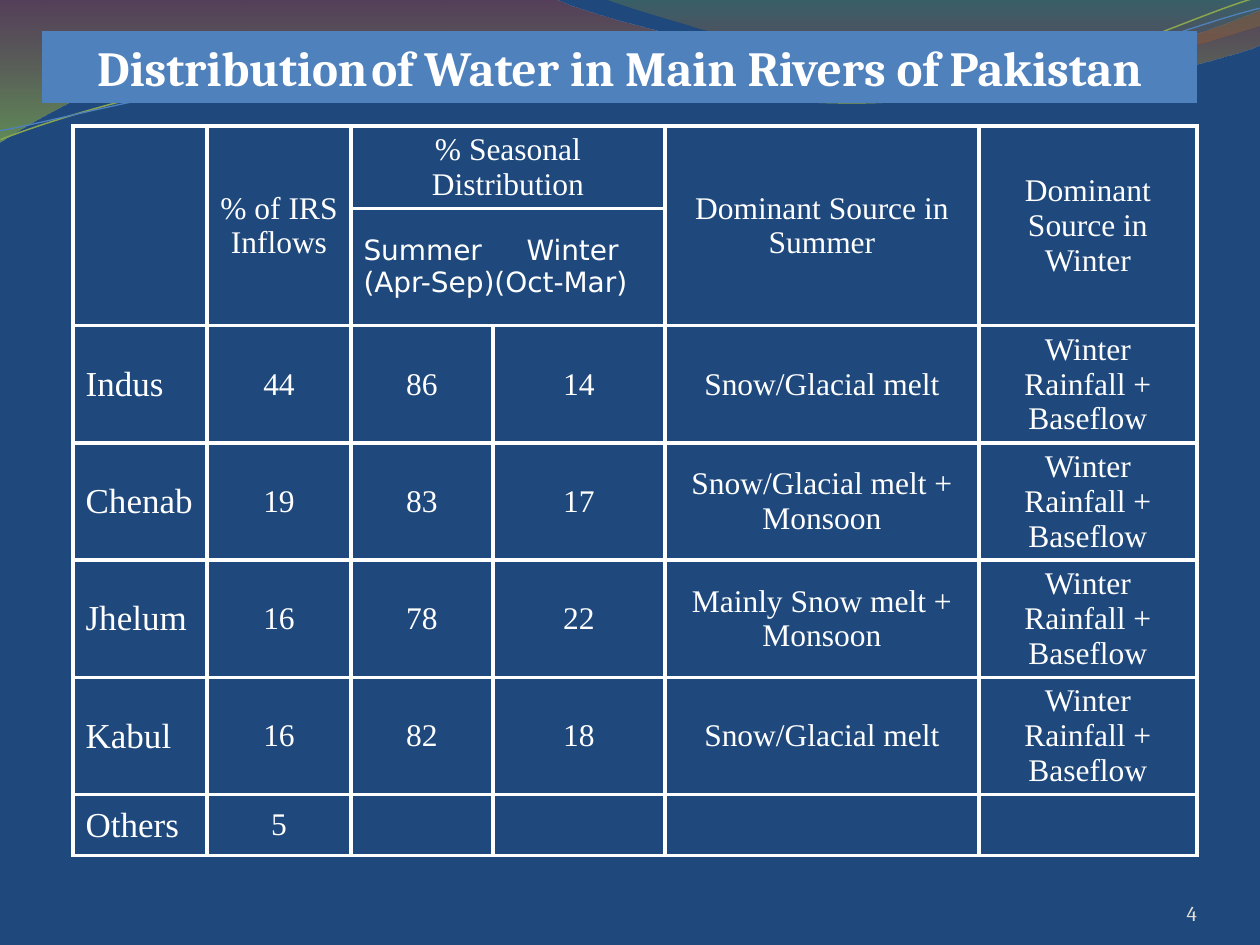
from dataclasses import dataclass

from lxml.etree import SubElement as Sub
from pptx import Presentation
from pptx.dml.color import RGBColor as RGB
from pptx.enum.text import MSO_ANCHOR as Anchor, MSO_AUTO_SIZE as Auto, PP_ALIGN as Align
from pptx.oxml.ns import qn
from pptx.util import Pt

PX = 914400 / 126


@dataclass(frozen=True)
class Theme:
    back: str = "1F497D"
    band: str = "4F81BD"
    lime: str = "89A54F"
    white: str = "FFFFFF"
    pale: str = "E3E1D7"
    head: str = "Cambria"
    body: str = "Times New Roman"
    sans: str = "DejaVu Sans"
    title: int = 28
    gap: int = 10
    name: int = 20
    cell: int = 18
    sub: int = 16
    page: int = 12
    rule: float = 2.25


T = Theme()
TILT = 357.3

# Each wave: start, then curves of three points or straight lines of one
WAVES = [
    ([(0, 0)], [(554, -1)],
     [(600, 21), (837, 79), (955, 79)], [(1075, 79), (1207, 33), (1260, 11)],
     [(1261, 45)], [(1239, 55), (1096, 96), (940, 95)],
     [(784, 95), (481, 35), (324, 43)], [(163, 45), (58, 105), (-1, 142)],
     [(0, 0)]),
    ([(604, -1)], [(641, 14), (859, 78), (969, 82)],
     [(1079, 87), (1211, 40), (1260, 26)], [(1260, 0)], [(604, -1)]),
]
# Stops: position, colour, opacity in percent
FADES = [
    [(0, "973330", 45), (1, "95C238", 55)],
    [(0, "769537", 30), (0.8, "BE3330", 45)],
]
# Thin curves before they are tilted
LINES = [
    (T.lime, 0.85, ([(-2, 110)], [(58, 90), (200, 52), (350, 53)],
                    [(499, 53), (745, 118), (896, 114)],
                    [(1048, 109), (1184, 45), (1260, 27)])),
    (T.band, 0.75, ([(-2, 101)], [(57, 94), (207, 57), (357, 58)],
                    [(509, 58), (750, 112), (902, 108)],
                    [(1052, 104), (1188, 52), (1262, 38)])),
]

COLS = [134, 144, 142, 172, 314, 218]
ROWS = [82] + [117] * 5 + [61]
# Header cells: row, column, last row, last column, text
HEADS = [
    (0, 0, 1, 0, ""),
    (0, 1, 1, 1, "% of IRS Inflows"),
    (0, 2, 0, 3, "% Seasonal Distribution"),
    (0, 4, 1, 4, "Dominant Source in Summer"),
    (0, 5, 1, 5, "Dominant Source in Winter"),
    (1, 2, 1, 3, "Summer\tWinter (Apr-Sep)(Oct-Mar)"),
]
WINTER = "Winter Rainfall + Baseflow"
RIVERS = [
    ("Indus", "44", "86", "14", "Snow/Glacial melt", WINTER),
    ("Chenab", "19", "83", "17", "Snow/Glacial melt + Monsoon", WINTER),
    ("Jhelum", "16", "78", "22", "Mainly Snow melt + Monsoon", WINTER),
    ("Kabul", "16", "82", "18", "Snow/Glacial melt", WINTER),
    ("Others", "5", "", "", "", ""),
]


def emu(n):
    return round(n * PX)


def rgb(code):
    return RGB.from_string(code)


def style(run, size, face, color=T.white, bold=False):
    font = run.font
    font.size, font.name, font.bold = Pt(size), face, bold
    font.color.rgb = rgb(color)


def outline(shapes, parts, box, close):
    """Draw a freeform whose three-point parts are Bezier curves."""
    x, y = box
    dots = [(emu(x + a), emu(y + b)) for part in parts for a, b in part]
    pen = shapes.build_freeform(*dots[0], scale=1.0)
    pen.add_line_segments(dots[1:], close=close)
    shape = pen.convert_to_shape()
    shape.shadow.inherit = False
    steps = iter(list(shape._element.iter(qn("a:lnTo"))))
    for part in parts[1:]:
        first, *rest = [next(steps) for _ in part]
        if rest:
            first.tag = qn("a:cubicBezTo")
        for step in rest:
            first.append(step[0])
            step.getparent().remove(step)
    return shape


def add_waves(slide, box):
    # Translucent bands
    for parts, fade in zip(WAVES, FADES):
        wave = outline(slide.shapes, parts, box, True)
        wave.line.fill.background()
        wave.fill.gradient()
        wave.fill.gradient_angle = 270
        for stop, (pos, color, _) in zip(wave.fill.gradient_stops, fade):
            stop.position = pos
            stop.color.rgb = rgb(color)
        for tag, (_, _, alpha) in zip(wave._element.iter(qn("a:srgbClr")), fade):
            Sub(tag, qn("a:alpha"), val=str(alpha * 1000))
    # Thin curves
    group = slide.shapes.add_group_shape()
    for color, width, parts in LINES:
        curve = outline(group.shapes, parts, box, False)
        curve.rotation = TILT
        curve.fill.background()
        curve.line.color.rgb = rgb(color)
        curve.line.width = Pt(width)


def add_title(slide, box):
    title = slide.shapes.title
    slide.shapes._spTree.append(title._element)  # bring to front
    title.left, title.top, title.width, title.height = map(emu, box)
    title.fill.solid()
    title.fill.fore_color.rgb = rgb(T.band)
    frame = title.text_frame
    frame.auto_size, frame.vertical_anchor = Auto.NONE, Anchor.TOP
    para = frame.paragraphs[0]
    para.alignment = Align.CENTER
    for text, size in (("Distribution", T.title), (" ", T.gap),
                       ("of Water in Main Rivers of Pakistan", T.title)):
        run = para.add_run()
        run.text = text
        style(run, size, T.head, bold=True)


def edge(cell):
    props = cell._tc.get_or_add_tcPr()
    for side in ("lnL", "lnR", "lnT", "lnB"):
        line = Sub(props, qn("a:" + side), w=str(Pt(T.rule)))
        Sub(Sub(line, qn("a:solidFill")), qn("a:srgbClr"), val=T.white)
    cell.fill.background()


def put(cell, text, size=T.cell, face=T.body, align=Align.CENTER):
    cell.vertical_anchor = Anchor.MIDDLE
    cell.text_frame.text = text
    para = cell.text_frame.paragraphs[0]
    para.alignment = align
    for run in para.runs:
        style(run, size, face)
    return para


def add_grid(slide, box):
    x, y = box
    size = map(emu, (x, y, sum(COLS), sum(ROWS)))
    table = slide.shapes.add_table(len(ROWS), len(COLS), *size).table
    table.first_row = table.horz_banding = False
    for col, width in zip(table.columns, COLS):
        col.width = emu(width)
    for row, height in zip(table.rows, ROWS):
        row.height = emu(height)
    for cell in table.iter_cells():
        edge(cell)
    # Header
    for r, c, r2, c2, text in HEADS:
        cell = table.cell(r, c)
        cell.merge(table.cell(r2, c2))
        if r == 0:
            put(cell, text)
        else:
            para = put(cell, text, T.sub, T.sans, Align.LEFT)
            tabs = Sub(para._p.get_or_add_pPr(), qn("a:tabLst"))
            Sub(tabs, qn("a:tab"), pos=str(emu(163)), algn="l")
    # Rivers
    for r, (name, *facts) in enumerate(RIVERS, 2):
        put(table.cell(r, 0), name, T.name, align=Align.LEFT)
        for c, text in enumerate(facts, 1):
            put(table.cell(r, c), text)


def add_page(slide, box):
    frame = slide.shapes.add_textbox(*map(emu, box)).text_frame
    frame.word_wrap = True
    frame.vertical_anchor = Anchor.BOTTOM
    frame.margin_left = frame.margin_right = frame.margin_top = frame.margin_bottom = 0
    frame.text = "4"
    para = frame.paragraphs[0]
    para.alignment = Align.RIGHT
    style(para.runs[0], T.page, T.head, T.pale)


def main():
    deck = Presentation()
    deck.slide_width, deck.slide_height = emu(1260), emu(945)
    slide = deck.slides.add_slide(deck.slide_layouts[5])
    fill = slide.background.fill
    fill.solid()
    fill.fore_color.rgb = rgb(T.back)
    add_waves(slide, (0, 0))
    add_grid(slide, (73, 126))
    add_page(slide, (1092, 876, 105, 50))
    add_title(slide, (42, 31, 1155, 72))
    deck.save("out.pptx")


if __name__ == "__main__":
    main()
